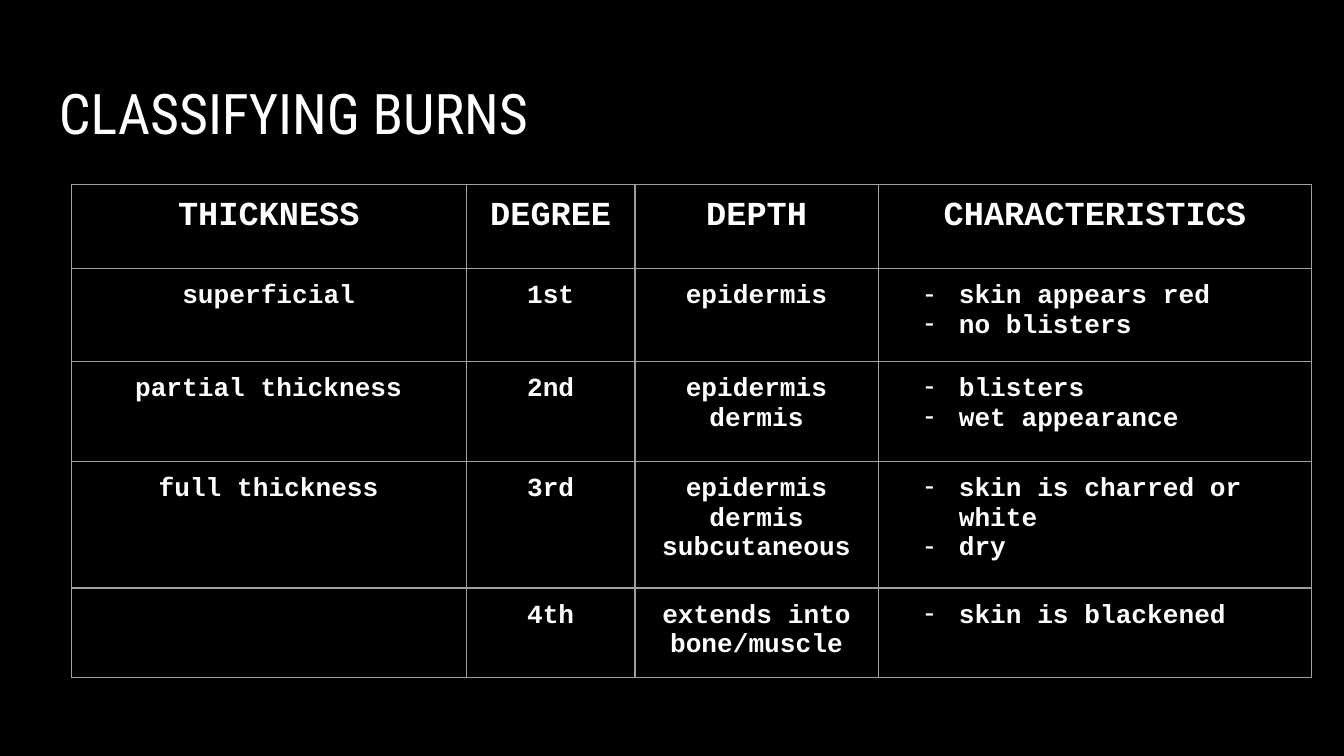
from dataclasses import dataclass

from lxml.etree import SubElement as Sub
from pptx import Presentation
from pptx.dml.color import RGBColor as Rgb
from pptx.enum.text import PP_ALIGN as Align
from pptx.oxml.ns import qn
from pptx.slide import Slide
from pptx.table import Table, _Cell as Cell
from pptx.text.text import _Paragraph as Para
from pptx.util import Pt

PX = 4572
INSET = 20
COLORS = {"back": "000000", "text": "FFFFFF", "line": "9E9E9E"}
MONO = "Courier New"
WIDTHS = (588, 251, 362, 645)
HEADS = ("THICKNESS", "DEGREE", "DEPTH", "CHARACTERISTICS")
TOP = 126


@dataclass(frozen=True)
class Burn:
    name: str
    degree: str
    depth: str
    signs: str
    height: int


BURNS = (
    Burn("superficial", "1st", "epidermis", "skin appears red\nno blisters", 138),
    Burn("partial thickness", "2nd", "epidermis\ndermis", "blisters\nwet appearance", 149),
    Burn("full thickness", "3rd", "epidermis\ndermis\nsubcutaneous",
         "skin is charred or white\ndry", 188),
    Burn("", "4th", "extends into bone/muscle", "skin is blackened", 120),
)


def style(para: Para, face: str, size: int, bold: bool = False) -> None:
    for part in (para, *para.runs):
        font = part.font
        font.name, font.size, font.bold = face, Pt(size), bold
        font.color.rgb = Rgb.from_string(COLORS["text"])


def dash(para: Para) -> None:
    props = para._p.get_or_add_pPr()
    props.set("marL", str(100 * PX))
    props.set("indent", str(-50 * PX))
    Sub(Sub(props, qn("a:buClr")), qn("a:srgbClr"), val=COLORS["text"])
    Sub(props, qn("a:buChar"), char="-")


def frame(cell: Cell) -> None:
    props = cell._tc.get_or_add_tcPr()
    for side in ("lnL", "lnR", "lnT", "lnB"):
        line = Sub(props, qn(f"a:{side}"), w=str(Pt(0.75)))
        fill = Sub(line, qn("a:solidFill"))
        Sub(fill, qn("a:srgbClr"), val=COLORS["line"])
    cell.fill.background()


def write(cell: Cell, text: str, size: int, listed: bool = False) -> None:
    frame(cell)
    cell.margin_left = cell.margin_right = INSET * PX
    cell.margin_top = cell.margin_bottom = INSET * PX
    cell.text_frame.text = text
    for para in cell.text_frame.paragraphs:
        if listed:
            dash(para)
        else:
            para.alignment = Align.CENTER
        style(para, MONO, size, True)


def title(slide: Slide, text: str) -> None:
    box = slide.shapes.add_textbox(68 * PX, 97 * PX, 1864 * PX, 126 * PX).text_frame
    box.word_wrap = True
    box.margin_left = box.margin_right = INSET * PX
    box.margin_top = box.margin_bottom = INSET * PX
    box.text = text
    style(box.paragraphs[0], "Roboto Condensed", 30)


def fill_row(table: Table, row: int, texts: tuple[str, ...], height: int) -> None:
    table.rows[row].height = height * PX
    for col, text in enumerate(texts):
        write(table.cell(row, col), text, 14 if row else 18, row > 0 and col == 3)


def list_burns(slide: Slide) -> None:
    high = TOP + sum(burn.height for burn in BURNS)
    table = slide.shapes.add_table(
        len(BURNS) + 1, len(HEADS), 106 * PX, 274 * PX, sum(WIDTHS) * PX, high * PX
    ).table
    table.first_row = table.horz_banding = False
    for col, width in zip(table.columns, WIDTHS):
        col.width = width * PX
    fill_row(table, 0, HEADS, TOP)
    for row, burn in enumerate(BURNS, 1):
        texts = (burn.name, burn.degree, burn.depth, burn.signs)
        fill_row(table, row, texts, burn.height)


def main() -> None:
    """Build the burn classification slide."""
    deck = Presentation()
    deck.slide_width, deck.slide_height = 2000 * PX, 1125 * PX
    slide = deck.slides.add_slide(deck.slide_layouts[6])
    back = slide.background.fill
    back.solid()
    back.fore_color.rgb = Rgb.from_string(COLORS["back"])
    title(slide, "CLASSIFYING BURNS")
    list_burns(slide)
    deck.save("out.pptx")


if __name__ == "__main__":
    main()
